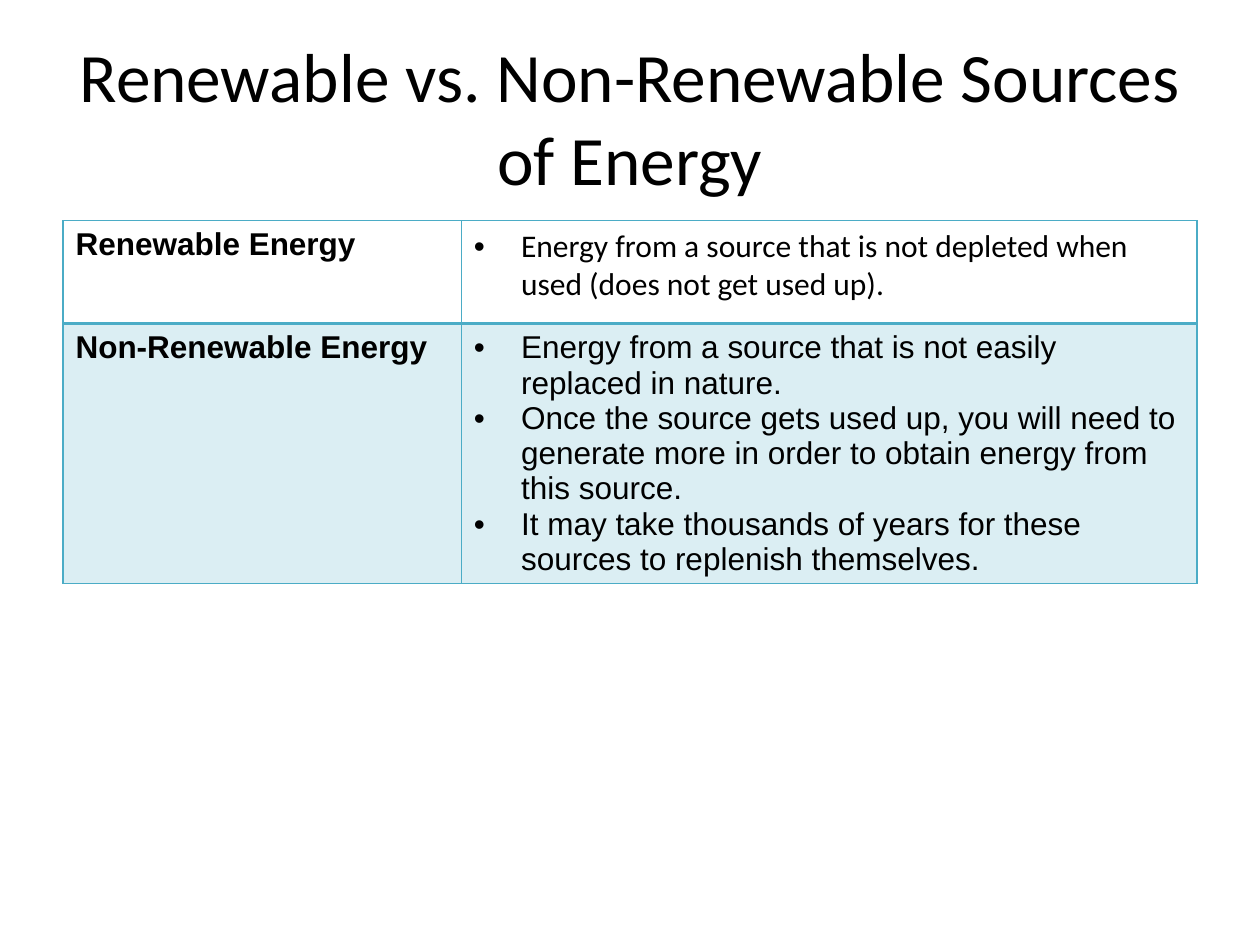
from lxml import etree
from pptx import Presentation
from pptx.dml.color import RGBColor
from pptx.enum import text
from pptx.oxml import ns
from pptx.util import Cm, Pt

COLORS = {"ink": "000000", "aqua": "4BACC6"}
ROWS = [
    ("Renewable Energy", "Calibri",
     ["Energy from a source that is not depleted when used (does not get used up)."]),
    ("Non-Renewable Energy", "Arial",
     ["Energy from a source that is not easily replaced in nature.",
      "Once the source gets used up, you will need to generate more in order to "
      "obtain energy from this source.",
      "It may take thousands of years for these sources to replenish themselves."]),
]


def add_node(parent, tag, **attrs):
    """Append a drawing element with the given attributes."""
    return etree.SubElement(parent, ns.qn(tag), attrs)


def set_font(para, name, size, bold=False):
    """Format the whole paragraph."""
    font = para.font
    font.name, font.size, font.bold = name, Pt(size), bold
    font.color.rgb = RGBColor.from_string(COLORS["ink"])


def add_title(slide, words):
    """Place and format the title."""
    title = slide.shapes.title
    title.left, title.top = Cm(1.27), Cm(0.76)
    title.width, title.height = Cm(22.86), Cm(3.18)
    frame = title.text_frame
    frame.text = words
    frame.auto_size = text.MSO_AUTO_SIZE.NONE
    frame.vertical_anchor = text.MSO_ANCHOR.MIDDLE
    para = frame.paragraphs[0]
    para.alignment = text.PP_ALIGN.CENTER
    set_font(para, "Calibri", 39.6)


def set_bullet(para):
    """Give a paragraph a round bullet and a hanging indent."""
    props = para._p.get_or_add_pPr()
    indent = Cm(0.95)
    props.set("marL", str(indent))
    props.set("indent", str(-indent))
    add_node(add_node(props, "a:buClr"), "a:srgbClr", val=COLORS["ink"])
    add_node(props, "a:buFont", typeface="Arial")
    add_node(props, "a:buChar", char="•")


def set_border(cell, **widths):
    """Draw the four cell borders, one point wide unless told otherwise."""
    props = cell._tc.get_or_add_tcPr()
    for side in "LRTB":
        line = add_node(props, f"a:ln{side}", w=str(Pt(widths.get(side, 1))))
        add_node(add_node(line, "a:solidFill"), "a:srgbClr", val=COLORS["aqua"])


def set_fill(cell, shaded):
    """Tint a shaded cell and leave any other clear."""
    if not shaded:
        cell.fill.background()
        return
    cell.fill.solid()
    cell.fill.fore_color.rgb = RGBColor.from_string(COLORS["aqua"])
    color = cell._tc.tcPr.find(".//" + ns.qn("a:solidFill") + "[last()]")
    fill = cell._tc.tcPr.findall(ns.qn("a:solidFill"))[-1]
    add_node(fill[0], "a:alpha", val="20000")


def fill_cell(cell, lines, name, bold):
    """Write the lines of a cell, with bullets unless bold."""
    frame = cell.text_frame
    frame.text = "\n".join(lines)
    for para in frame.paragraphs:
        if not bold:
            set_bullet(para)
        set_font(para, name, 18, bold)


def add_grid(slide):
    """Build the table of energy kinds."""
    shape = slide.shapes.add_table(len(ROWS), 2, Cm(1.27), Cm(4.45), Cm(22.86), Cm(7.31))
    table = shape.table
    table.first_row = table.horz_banding = False
    for col, width in zip(table.columns, (8.03, 14.83)):
        col.width = Cm(width)
    for row, height in zip(table.rows, (2.08, 5.23)):
        row.height = Cm(height)
    for i, (kind, name, facts) in enumerate(ROWS):
        left, right = table.rows[i].cells
        fill_cell(left, [kind], "Arial", True)
        fill_cell(right, facts, name, False)
        for cell in (left, right):
            set_border(cell, **({"T": 2} if i else {"B": 2}))
            set_fill(cell, i % 2 == 1)


def main():
    """Build and save the slide."""
    deck = Presentation()
    deck.slide_width, deck.slide_height = Cm(25.4), Cm(19.05)
    slide = deck.slides.add_slide(deck.slide_layouts[5])
    add_title(slide, "Renewable vs. Non-Renewable Sources of Energy")
    add_grid(slide)
    deck.save("out.pptx")


if __name__ == "__main__":
    main()
